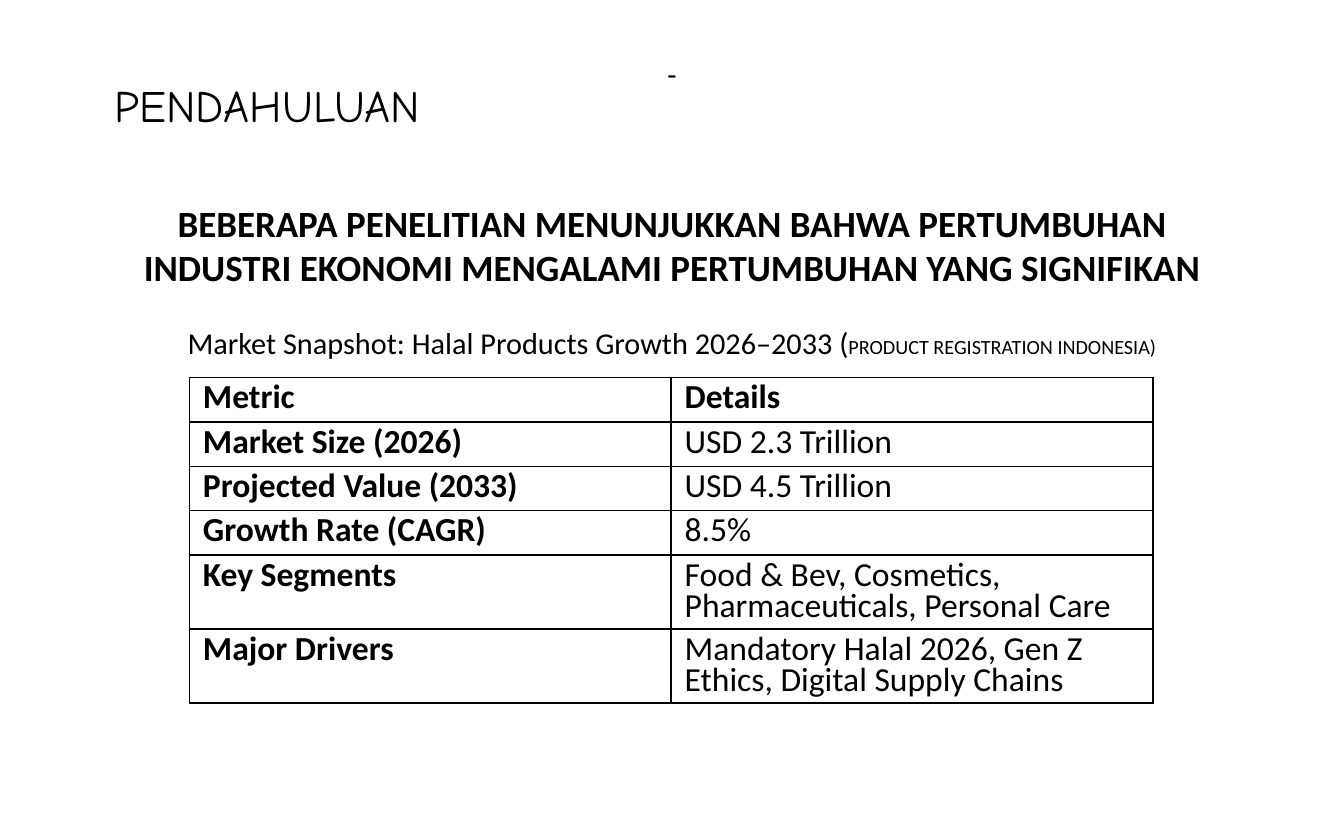
from lxml import etree
from pptx import Presentation
from pptx.dml.color import RGBColor
from pptx.enum.text import MSO_ANCHOR, PP_ALIGN
from pptx.oxml.ns import qn
from pptx.util import Inches, Pt

CENTER = PP_ALIGN.CENTER
LEFT = PP_ALIGN.LEFT
TOP = MSO_ANCHOR.TOP

COLORS = {"text": "000000", "border": "000000"}
BODY_FONT = "Calibri"
HEADING_FONT = "Comic Neue"

METRICS = [
    ("Metric", "Details"),
    ("Market Size (2026)", "USD 2.3 Trillion"),
    ("Projected Value (2033)", "USD 4.5 Trillion"),
    ("Growth Rate (CAGR)", "8.5%"),
    ("Key Segments", "Food & Bev, Cosmetics, Pharmaceuticals, Personal Care"),
    ("Major Drivers", "Mandatory Halal 2026, Gen Z Ethics, Digital Supply Chains"),
]
ROW_HEIGHTS = [0.33] * 4 + [0.55] * 2


def add_run(paragraph, text, size, name=BODY_FONT, bold=False):
    run = paragraph.add_run()
    run.text = text
    formats = {"size": Pt(size), "name": name, "bold": bold}
    for attribute, value in formats.items():
        setattr(run.font, attribute, value)
    run.font.color.rgb = RGBColor.from_string(COLORS["text"])


def add_text(slide, box, paragraphs, align=LEFT, wrap=True):
    """Add a text box; each paragraph is (points before, list of run formats)."""
    frame = slide.shapes.add_textbox(*map(Inches, box)).text_frame
    frame.word_wrap = wrap
    frame.vertical_anchor = TOP
    for index, (space_before, runs) in enumerate(paragraphs):
        paragraph = frame.add_paragraph() if index else frame.paragraphs[0]
        paragraph.alignment = align
        paragraph.space_before = Pt(space_before)
        for run in runs:
            add_run(paragraph, **run)


def add_borders(cell):
    properties = cell._tc.get_or_add_tcPr()
    for side in ("lnL", "lnR", "lnT", "lnB"):
        line = etree.SubElement(properties, qn(f"a:{side}"), w=str(Pt(1)))
        fill = etree.SubElement(line, qn("a:solidFill"))
        etree.SubElement(fill, qn("a:srgbClr"), val=COLORS["border"])


def add_metrics_table(slide):
    frame = slide.shapes.add_table(
        len(METRICS), 2, Inches(1.41), Inches(2.81), Inches(7.17), Inches(sum(ROW_HEIGHTS))
    )
    table = frame.table
    table.first_row = table.horz_banding = False
    for row, height in zip(table.rows, ROW_HEIGHTS):
        row.height = Inches(height)
    for row_index, texts in enumerate(METRICS):
        for column_index, text in enumerate(texts):
            cell = table.cell(row_index, column_index)
            add_borders(cell)
            cell.fill.background()
            paragraph = cell.text_frame.paragraphs[0]
            paragraph.line_spacing = 0.75
            add_run(paragraph, text, 18, bold=row_index == 0 or column_index == 0)


def main():
    presentation = Presentation()
    presentation.slide_width = Inches(10)
    presentation.slide_height = Inches(6.25)
    slide = presentation.slides.add_slide(presentation.slide_layouts[6])

    statement = (
        "BEBERAPA PENELITIAN MENUNJUKKAN BAHWA PERTUMBUHAN "
        "INDUSTRI EKONOMI MENGALAMI PERTUMBUHAN YANG SIGNIFIKAN"
    )
    add_text(slide, (0.75, 0.36, 8.5, 2.4), [
        (0, [{"text": "-", "size": 16.2}]),
        (58.5, [{"text": statement, "size": 19.8, "bold": True}]),
        (19, [
            {"text": "Market Snapshot: Halal Products Growth 2026–2033 (", "size": 16.2},
            {"text": "PRODUCT REGISTRATION INDONESIA)", "size": 10.8},
        ]),
    ], align=CENTER)
    add_text(slide, (0.75, 0.53, 2.49, 0.5), [
        (0, [{"text": "PENDAHULUAN", "size": 24, "name": HEADING_FONT}]),
    ], wrap=False)
    add_metrics_table(slide)
    presentation.save("out.pptx")


if __name__ == "__main__":
    main()
